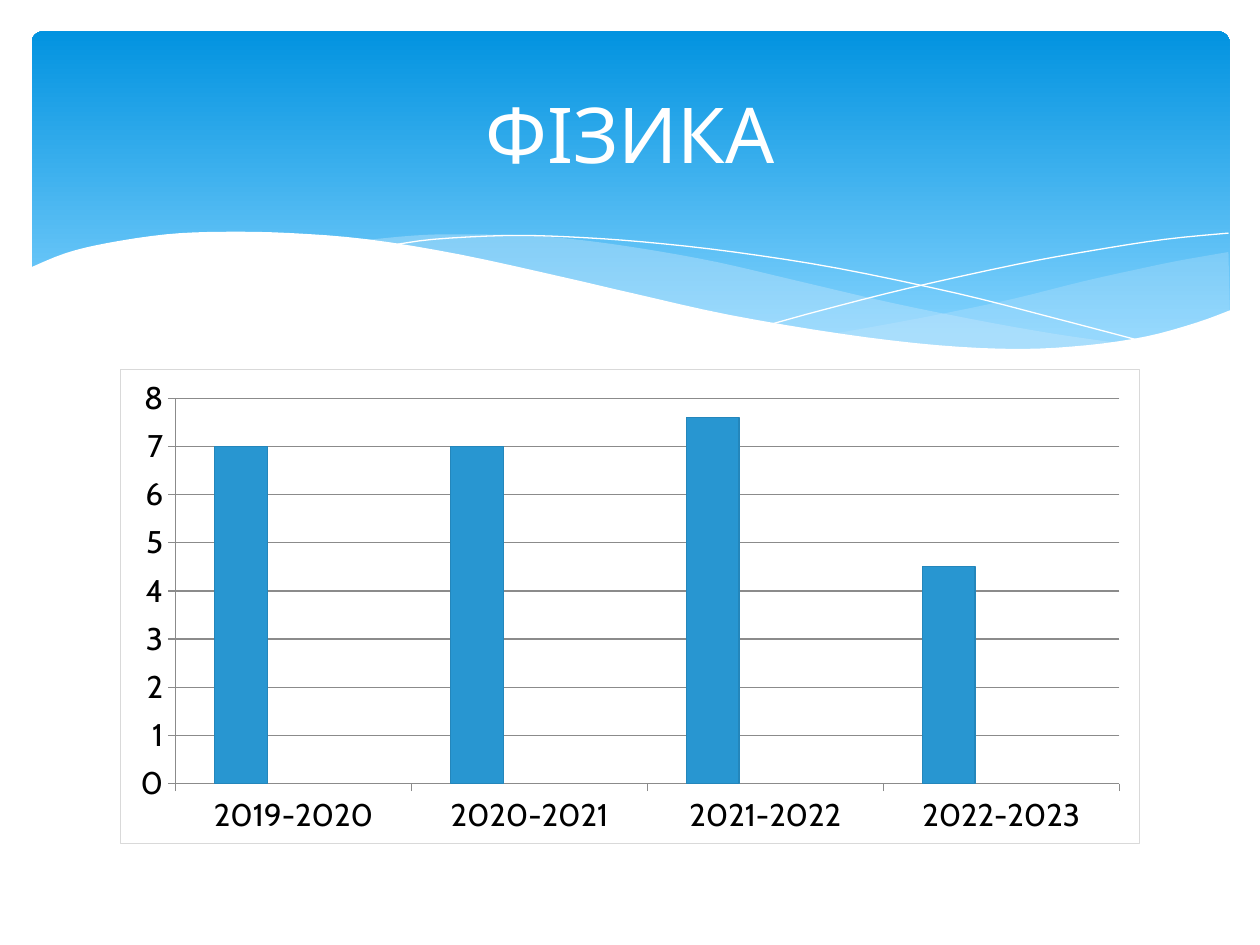
from dataclasses import dataclass

from lxml import etree
from pptx import Presentation
from pptx import util as u
from pptx.chart.data import CategoryChartData
from pptx.dml.color import RGBColor
from pptx.enum import chart as ch, shapes, text
from pptx.oxml import parse_xml
from pptx.oxml.ns import nsdecls, qn

PX = 9144


@dataclass(frozen=True)
class Theme:
    white: str = "FFFFFF"
    black: str = "000000"
    sky: str = "83D3FE"
    blue: str = "0293E0"
    mist: str = "C6E7FC"
    axis: str = "8B8B8B"
    border: str = "D9D9D9"
    bar_line: str = "2486BB"
    bars: tuple = ("2896D1", "31B6FD", "A4D3FD")
    font: str = "Cabin"
    title: int = 44
    label: int = 18
    rule: float = 0.75


T = Theme()

RIGHT_TOP = [(950, 175), (910, 182), (881, 188), (836, 198), (780, 212),
             (728, 223), (681, 232), (636, 240)]
RIGHT_BOTTOM = [(636, 240), (680, 246), (720, 250), (778, 253), (829, 251),
                (872, 245), (910, 236), (951, 222)]
MID_TOP = [(868, 248), (812, 240), (750, 229), (681, 215), (604, 197), (544, 183),
           (489, 173), (440, 166), (395, 162), (336, 161), (303, 162), (261, 166)]
MID_BOTTOM = [(261, 166), (317, 174), (379, 186), (424, 197), (505, 215), (576, 230),
              (640, 241), (697, 249), (760, 253), (813, 253), (868, 248)]
FALLING = [(284, 170), (319, 165), (376, 162), (425, 163), (485, 167), (557, 175),
           (640, 188), (735, 208), (806, 226), (882, 246)]
RISING = [(588, 232), (628, 221), (695, 204), (781, 185), (841, 174), (899, 165),
          (950, 160)]
EDGE = [(952, 221), (925, 231), (885, 242), (838, 249), (784, 252), (719, 249),
        (643, 240), (554, 225), (478, 208), (422, 195), (340, 177), (267, 165),
        (205, 160), (152, 159), (107, 161), (60, 168), (27, 176), (-2, 188)]
EDGE_FOOT = [(-2, 304), (952, 304)]


def rgb(c):
    return RGBColor.from_string(c)


def emu(box):
    return [v * PX for v in box]


def smooth(pts, steps=4):
    ext = [pts[0], *pts, pts[-1]]
    out = []
    for a, b, c, d in zip(ext, ext[1:], ext[2:], ext[3:]):
        for k in range(steps):
            t = k / steps
            out.append(tuple(
                (2 * q + (r - p) * t + (2 * p - 5 * q + 4 * r - z) * t * t
                 + (3 * q - p - 3 * r + z) * t ** 3) / 2
                for p, q, r, z in zip(a, b, c, d)))
    return out + [pts[-1]]


def curve(s, box, pts, fill=None, alpha=100):
    pts = [((box[0] + x) * PX, (box[1] + y) * PX) for x, y in pts]
    fb = s.shapes.build_freeform(*pts[0], scale=1.0)
    fb.add_line_segments(pts[1:], close=fill is not None)
    sp = fb.convert_to_shape()
    sp.shadow.inherit = False
    if fill is None:
        sp.fill.background()
        sp.line.color.rgb = rgb(T.white)
        sp.line.width = u.Pt(0)
        return
    sp.fill.solid()
    sp.fill.fore_color.rgb = rgb(fill)
    sp.line.fill.background()
    if alpha < 100:
        clr = sp.fill._xPr.find(qn("a:solidFill"))[0]
        etree.SubElement(clr, qn("a:alpha")).set("val", str(alpha * 1000))


def banner(s, box):
    sp = s.shapes.add_shape(shapes.MSO_SHAPE.ROUNDED_RECTANGLE, *emu(box))
    sp.adjustments[0] = 0.034
    sp.shadow.inherit = False
    sp.line.fill.background()
    sp.fill.gradient()
    sp.fill.gradient_angle = 90
    for stop, pos, c in zip(sp.fill.gradient_stops, (0.1, 1), (T.sky, T.blue)):
        stop.position = pos
        stop.color.rgb = rgb(c)
    curve(s, box, smooth(RIGHT_TOP) + smooth(RIGHT_BOTTOM), T.mist, 29)
    curve(s, box, smooth(MID_TOP) + smooth(MID_BOTTOM), T.mist, 40)
    curve(s, box, smooth(FALLING))
    curve(s, box, smooth(RISING))
    curve(s, box, smooth(EDGE) + EDGE_FOOT, T.white)


def title(s, box, words):
    tf = s.shapes.add_textbox(*emu(box)).text_frame
    tf.word_wrap = True
    tf.vertical_anchor = text.MSO_ANCHOR.MIDDLE
    p = tf.paragraphs[0]
    p.alignment = text.PP_ALIGN.CENTER
    r = p.add_run()
    r.text = words
    r.font.name = T.font
    r.font.size = u.Pt(T.title)
    r.font.color.rgb = rgb(T.white)


def rule(line, c):
    line.color.rgb = rgb(c)
    line.width = u.Pt(T.rule)


def grades(s, box, cats, rows):
    data = CategoryChartData()
    data.categories = cats
    for name, vals in rows:
        data.add_series(name, vals)
    c = s.shapes.add_chart(ch.XL_CHART_TYPE.COLUMN_CLUSTERED, *emu(box), data).chart
    c.has_legend = False
    c.has_title = False
    c.font.name = T.font
    c.font.size = u.Pt(T.label)
    c.font.color.rgb = rgb(T.black)
    plot = c.plots[0]
    plot.gap_width = 150
    plot.vary_by_categories = False
    for ser, color in zip(plot.series, T.bars):
        ser.format.fill.solid()
        ser.format.fill.fore_color.rgb = rgb(color)
        rule(ser.format.line, T.bar_line)
    for ax in (c.category_axis, c.value_axis):
        ax.major_tick_mark = ch.XL_TICK_MARK.OUTSIDE
        ax.minor_tick_mark = ch.XL_TICK_MARK.NONE
        rule(ax.format.line, T.axis)
    va = c.value_axis
    va.minimum_scale, va.maximum_scale, va.major_unit = 0, 8, 1
    va.has_major_gridlines = True
    rule(va.major_gridlines.format.line, T.axis)
    c._chartSpace.find(qn("c:chart")).addnext(parse_xml(
        f'<c:spPr {nsdecls("c", "a")}><a:noFill/><a:ln w="{u.Pt(T.rule)}"><a:solidFill>'
        f'<a:srgbClr val="{T.border}"/></a:solidFill></a:ln></c:spPr>'))


def main():
    prs = Presentation()
    prs.slide_width, prs.slide_height = 1000 * PX, 750 * PX
    s = prs.slides.add_slide(prs.slide_layouts[6])
    banner(s, (25, 25, 951, 270))
    grades(s, (95, 293, 810, 377),
           ["2019-2020", "2020-2021", "2021-2022", "2022-2023"],
           [("Series 1", (7, 7, 7.6, 4.5)),
            ("Series 2", (None,) * 4),
            ("Series 3", (None,) * 4)])
    title(s, (50, 37, 900, 137), "ФІЗИКА")
    prs.save("out.pptx")


if __name__ == "__main__":
    main()
